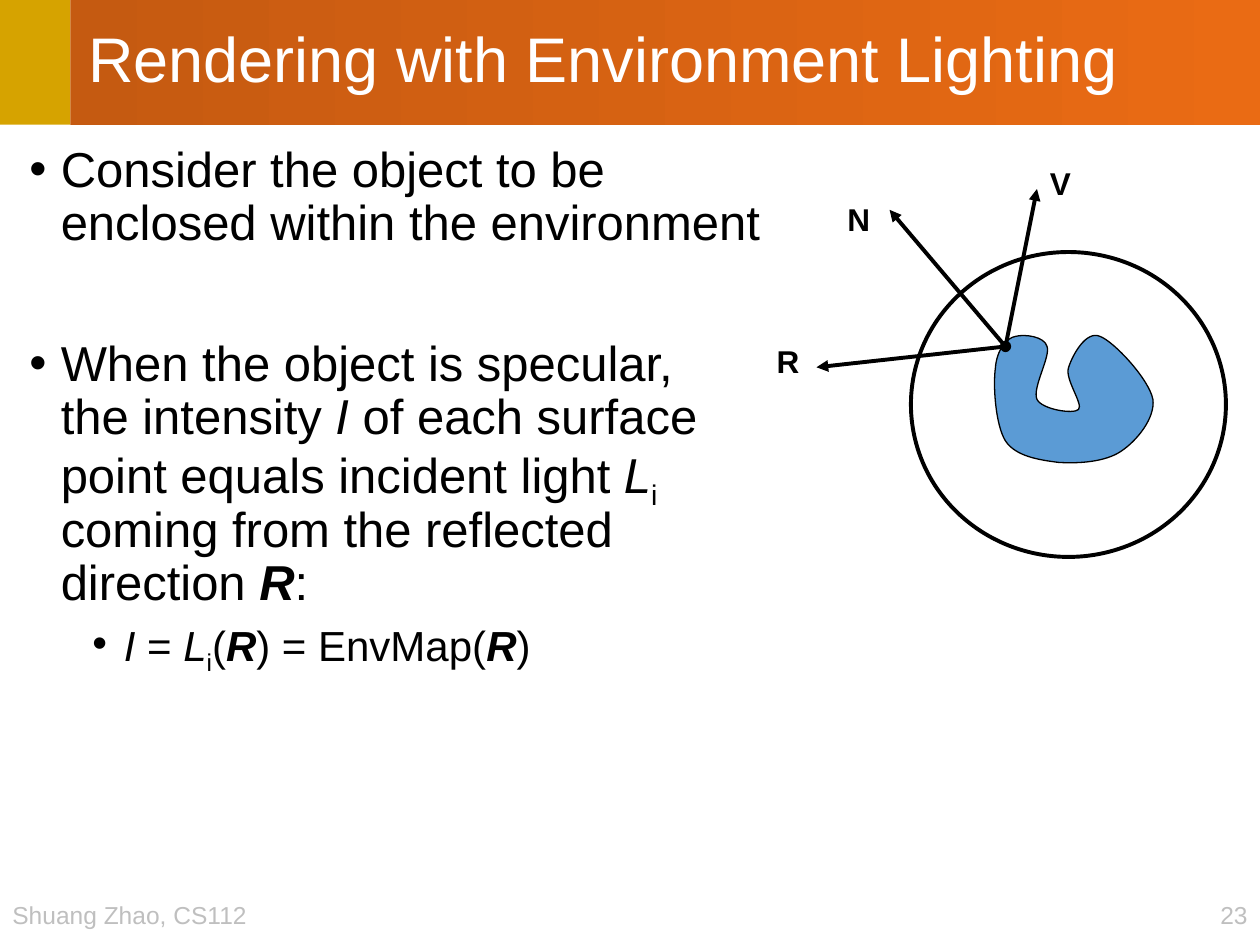
from lxml.etree import SubElement as Sub
from pptx import Presentation
from pptx.dml.color import RGBColor as Rgb
from pptx.enum.shapes import MSO_CONNECTOR as Link, MSO_SHAPE as Kind
from pptx.enum.text import MSO_ANCHOR as Anchor, PP_ALIGN as Align
from pptx.oxml.ns import qn
from pptx.util import Inches, Pt

INK = {"gold": "D6A300", "rust": "C55A11", "orange": "EA6B14", "white": "FFFFFF",
       "black": "000000", "grey": "BFBFBF", "blue": "5B9BD5"}
COLS, ROWS = 100, 75
TITLE = "Rendering with Environment Lighting"
FOOT = [("Shuang Zhao, CS112", (0, 70.95, 26.1, 4), Align.LEFT),
        ("23", (94.9, 70.95, 5.1, 4), Align.RIGHT)]
BODY = [
    (0, 10, [("Consider the object to be\nenclosed within the environment", "")]),
    (0, 50.7, [("When the object is specular,\nthe intensity ", ""), ("I", "i"),
               (" of each surface\npoint equals incident light ", ""), ("L", "i"),
               ("i", "s"), ("\ncoming from the reflected\ndirection ", ""),
               ("R", "bi"), (":", "")]),
    (1, 5, [("I", "i"), (" = ", ""), ("L", "i"), ("i", "s"), ("(", ""),
            ("R", "bi"), (") = EnvMap(", ""), ("R", "bi"), (")", "")]),
]
LEVELS = [(28, 0.25), (24, 0.75)]
POINT = (79.8, 27.5)
RAYS = [("N", (70.6, 16.65), (66.25, 15.4)),
        ("V", (82.3, 15), (82.25, 12.5)),
        ("R", (64.8, 29.15), (60.65, 26.65))]
START = (79, 29.2)
CURVES = [
    [(78.8, 30.6), (79, 33.7), (79.8, 35)], [(80.6, 36.2), (82.4, 36.5), (84, 36.7)],
    [(85.5, 36.8), (87.7, 36.7), (89, 35.8)], [(90.2, 35), (91.7, 33.2), (91.5, 31.7)],
    [(91.2, 30.1), (88.4, 27.1), (87.3, 26.7)], [(86.2, 26.2), (85.1, 28.2), (84.8, 29.2)],
    [(84.5, 30.1), (86, 32.1), (85.6, 32.5)], [(85.2, 32.9), (82.7, 32.5), (82.3, 31.7)],
    [(81.9, 30.8), (83.4, 28.3), (83.1, 27.5)], [(82.9, 26.7), (81.3, 26.5), (80.6, 26.7)],
    [(79.9, 26.8), (79.1, 27.8), START],
]

deck = Presentation()
deck.slide_width, deck.slide_height = Inches(10), Inches(7.5)
slide = deck.slides.add_slide(deck.slide_layouts[6])
shapes = slide.shapes


def grid(*cells):
    sides = (deck.slide_width / COLS, deck.slide_height / ROWS)
    return [round(c * sides[n % 2]) for n, c in enumerate(cells)]


def hue(name):
    return Rgb.from_string(INK[name])


def paint(shape, fill=None, line=None, width=0.75):
    shape.shadow.inherit = False
    if fill:
        shape.fill.solid()
        shape.fill.fore_color.rgb = hue(fill)
    else:
        shape.fill.background()
    if line:
        shape.line.color.rgb = hue(line)
        shape.line.width = Pt(width)
    else:
        shape.line.fill.background()
    return shape


def draw(kind, box, **look):
    return paint(shapes.add_shape(kind, *grid(*box)), **look)


def box(cells):
    return shapes.add_textbox(*grid(*cells)).text_frame


def write(para, text, size=18, ink="black", style="", align=Align.LEFT):
    para.alignment = align
    for n, part in enumerate(text.split("\n")):
        if n:
            para.add_line_break()
        if not part:
            continue
        run = para.add_run()
        run.text = part
        font = run.font
        font.name, font.size = "Arial", Pt(size)
        font.color.rgb = hue(ink)
        font.bold, font.italic = "b" in style, "i" in style
        if "s" in style:
            run._r.get_or_add_rPr().set("baseline", "-25000")


def bullet(para, indent):
    props = para._p.get_or_add_pPr()
    props.set("marL", str(Inches(indent)))
    props.set("indent", str(Inches(-0.25)))
    Sub(props, qn("a:buFont"), typeface="Arial")
    Sub(props, qn("a:buChar"), char="•")


def arrow(start, end):
    line = shapes.add_connector(Link.STRAIGHT, *grid(*start, *end))
    line.line.color.rgb = hue("black")
    line.line.width = Pt(2.25)
    Sub(line.line._get_or_add_ln(), qn("a:tailEnd"), type="triangle")
    Sub(line._element.spPr, qn("a:effectLst"))


def blob(start, curves):
    pen = shapes.build_freeform(*grid(*start))
    pen.add_line_segments([grid(*curve[-1]) for curve in curves], close=True)
    shape = pen.convert_to_shape()
    edges = list(shape._element.iter(qn("a:lnTo")))
    for edge, curve in zip(edges, curves):
        bend = edge.makeelement(qn("a:cubicBezTo"))
        for spot in curve:
            x, y = grid(*spot)
            Sub(bend, qn("a:pt"), x=str(x - shape.left), y=str(y - shape.top))
        edge.getparent().replace(edge, bend)
    return shape


draw(Kind.RECTANGLE, (0, 0, 5.6, 9.9), fill="gold")
for text, cells, side in FOOT:
    frame = box(cells)
    frame.word_wrap = True
    write(frame.paragraphs[0], text, size=14, ink="grey", align=side)

frame = box((1.34, 11, 97.5, 59.8))
frame.word_wrap = True
for n, (level, gap, runs) in enumerate(BODY):
    para = frame.add_paragraph() if n else frame.paragraphs[0]
    size, indent = LEVELS[level]
    para.level, para.line_spacing, para.space_before = level, 0.9, Pt(gap)
    bullet(para, indent)
    for text, style in runs:
        write(para, text, size=size, style=style)

head = draw(Kind.RECTANGLE, (5.6, 0, 94.4, 9.9))
head.fill.gradient()
head.fill.gradient_angle = 0
for stop, name in zip(head.fill.gradient_stops, ("rust", "orange")):
    stop.color.rgb = hue(name)
frame = head.text_frame
frame.word_wrap = True
frame.vertical_anchor = Anchor.MIDDLE
frame.margin_left = Inches(0.14)
frame.paragraphs[0].line_spacing = 0.9
write(frame.paragraphs[0], TITLE, size=36, ink="white")

draw(Kind.OVAL, (72.3, 20, 25, 24.2), line="black", width=2.25)
paint(blob(START, CURVES), fill="blue", line="black")
for name, tip, spot in RAYS:
    arrow(POINT, tip)
    write(box((*spot, 3.8, 4)).paragraphs[0], name, style="b", align=Align.CENTER)
draw(Kind.OVAL, (POINT[0] - 0.4, POINT[1] - 0.4, 0.8, 0.8), fill="black", line="black")

deck.save("out.pptx")
